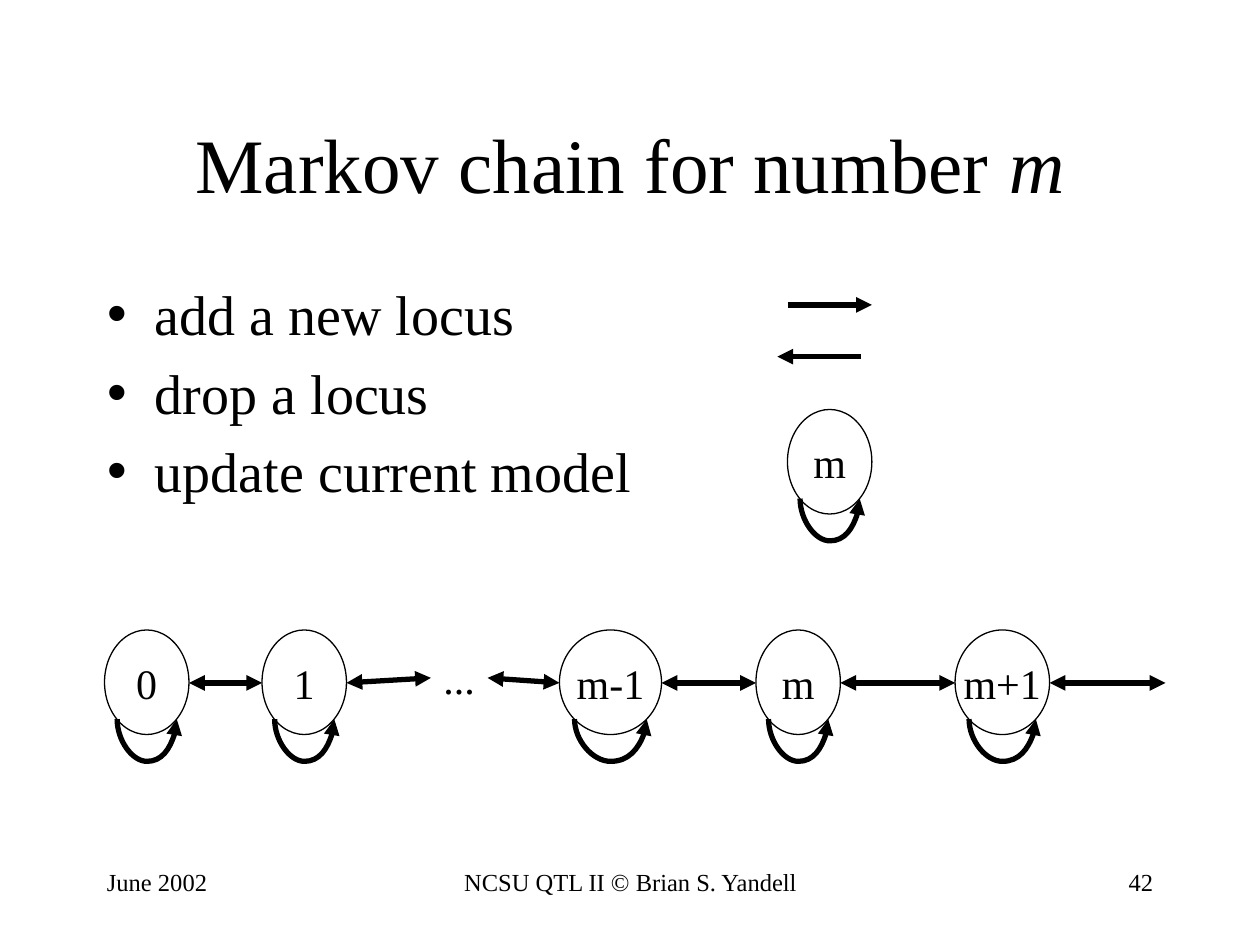
from dataclasses import dataclass
from math import sqrt

from lxml import etree
from pptx import Presentation
from pptx.dml.color import RGBColor
from pptx.enum.shapes import MSO_CONNECTOR, MSO_SHAPE
from pptx.enum.text import MSO_ANCHOR, MSO_AUTO_SIZE, PP_ALIGN
from pptx.oxml.ns import qn
from pptx.util import Emu, Inches, Pt

BLACK = RGBColor(0x00, 0x00, 0x00)
FONT = "Times New Roman"
LEFT, CENTER, RIGHT = PP_ALIGN.LEFT, PP_ALIGN.CENTER, PP_ALIGN.RIGHT
TOP, MIDDLE = MSO_ANCHOR.TOP, MSO_ANCHOR.MIDDLE
STRAIGHT, CURVE = MSO_CONNECTOR.STRAIGHT, MSO_CONNECTOR.CURVE
OVAL = MSO_SHAPE.OVAL
FIT_SHAPE, NO_FIT = MSO_AUTO_SIZE.SHAPE_TO_FIT_TEXT, MSO_AUTO_SIZE.NONE
LEFT_SIDE, RIGHT_SIDE = 1, 3

STATE_HEIGHT = 0.83
CHAIN_TOP = 5.0
CHAIN_MIDDLE = 5.42
LOOP_DEPTH = 0.37
LOOP_THICKNESS = Emu(1588)  # the curve's depth is a multiple of this


@dataclass(frozen=True)
class State:
    label: str
    left: float
    top: float = CHAIN_TOP
    width: float = 0.67

    @property
    def right(self) -> float:
        return self.left + self.width


@dataclass(frozen=True)
class Footer:
    text: str
    left: float
    width: float
    align: PP_ALIGN


ZERO = State("0", 0.83)
ONE = State("1", 2.08)
BEFORE = State("m-1", 4.44, width=0.81)
CURRENT = State("m", 6.0)
AFTER = State("m+1", 7.58, width=0.75)
CHAIN = [ZERO, ONE, BEFORE, CURRENT, AFTER]
LINKS = [(ZERO, ONE), (BEFORE, CURRENT), (CURRENT, AFTER)]
UPDATE = State("m", 6.25, 3.25)

MOVES = ["add a new locus", "drop a locus", "update current model"]
FOOTERS = [
    Footer("June 2002", 0.75, 2.08, LEFT),
    Footer("NCSU QTL II © Brian S. Yandell", 3.42, 3.17, CENTER),
    Footer("42", 7.17, 2.08, RIGHT),
]


def write(para, text: str, *, size: float, italic: bool = False, align=LEFT) -> None:
    para.alignment = align
    span = para.add_run()
    span.text = text
    font = span.font
    font.name, font.size, font.italic = FONT, Pt(size), italic
    font.color.rgb = BLACK


def place(shape, left: float, top: float, width: float, height: float) -> None:
    shape.left, shape.top = Inches(left), Inches(top)
    shape.width, shape.height = Inches(width), Inches(height)


def add_text(page, text: str, left: float, top: float, width: float, *,
             size: float, align=LEFT, wrap: bool = True, fit=NO_FIT):
    box = page.shapes.add_textbox(Inches(left), Inches(top), Inches(width), Inches(0.5))
    frame = box.text_frame
    frame.word_wrap, frame.auto_size = wrap, fit
    write(frame.paragraphs[0], text, size=size, align=align)
    return box


def style_arrow(connector, both: bool = False) -> None:
    connector.line.color.rgb = BLACK
    connector.line.width = Pt(3)
    line = connector.line._get_or_add_ln()
    for end in ("a:headEnd", "a:tailEnd") if both else ("a:tailEnd",):
        etree.SubElement(line, qn(end), type="triangle")
    etree.SubElement(connector.element.spPr, qn("a:effectLst"))


def add_arrow(page, start: float, end: float, y: float, *, both: bool = False):
    arrow = page.shapes.add_connector(
        STRAIGHT, Inches(start), Inches(y), Inches(end), Inches(y))
    style_arrow(arrow, both)
    return arrow


def add_loop(page, state: State) -> None:
    """Arrow from the lower left to the lower right of a state's ellipse."""
    span = state.width / sqrt(2)
    center = state.left + state.width / 2
    y = state.top + STATE_HEIGHT / 2 * (1 + 1 / sqrt(2))
    loop = page.shapes.add_connector(CURVE, 0, 0, 0, 0)
    place(loop, center, y - span / 2, 0, span)
    loop.width = LOOP_THICKNESS
    # A quarter turn and a flip make the curve hang below its ends
    properties = loop.element.spPr
    frame = properties.find(qn("a:xfrm"))
    frame.set("rot", "16200000")
    frame.set("flipH", "1")
    bend = round(Inches(LOOP_DEPTH) / LOOP_THICKNESS * 100000)
    guides = properties.find(qn("a:prstGeom")).find(qn("a:avLst"))
    etree.SubElement(guides, qn("a:gd"), name="adj1", fmla=f"val {bend}")
    style_arrow(loop)


def add_state(page, state: State) -> None:
    oval = page.shapes.add_shape(
        OVAL, Inches(state.left), Inches(state.top), Inches(state.width), Inches(STATE_HEIGHT))
    oval.shadow.inherit = False
    oval.fill.background()
    oval.line.color.rgb = BLACK
    oval.line.width = Pt(0.75)
    frame = oval.text_frame
    frame.word_wrap, frame.vertical_anchor = False, MIDDLE
    write(frame.paragraphs[0], state.label, size=24, align=CENTER)
    add_loop(page, state)


def fill_placeholders(page) -> None:
    title, body = page.placeholders
    place(title, 0.75, 0.67, 8.5, 1.25)
    title.text_frame.vertical_anchor = MIDDLE
    heading = title.text_frame.paragraphs[0]
    write(heading, "Markov chain for number ", size=44, align=CENTER)
    write(heading, "m", size=44, italic=True, align=CENTER)

    place(body, 0.75, 2.17, 8.5, 1.92)
    frame = body.text_frame
    frame.vertical_anchor, frame.auto_size = TOP, NO_FIT
    for index, move in enumerate(MOVES):
        para = frame.add_paragraph() if index else frame.paragraphs[0]
        write(para, move, size=32)
        layout = para._p.get_or_add_pPr()
        layout.set("marL", str(Inches(0.38)))
        layout.set("indent", str(-Inches(0.38)))
        etree.SubElement(layout, qn("a:buChar"), char="•")


def main() -> None:
    deck = Presentation()
    deck.slide_width, deck.slide_height = Inches(10), Inches(7.5)
    page = deck.slides.add_slide(deck.slide_layouts[1])

    # Title, list and footer
    fill_placeholders(page)
    for footer in FOOTERS:
        add_text(page, footer.text, footer.left, 6.83, footer.width,
                 size=14, align=footer.align)

    # Key to the three moves
    add_arrow(page, 6.25, 6.92, 2.42)
    add_arrow(page, 6.83, 6.17, 2.83)
    add_state(page, UPDATE)

    # Chain of states
    for state in CHAIN:
        add_state(page, state)
    for first, second in LINKS:
        add_arrow(page, first.right, second.left, CHAIN_MIDDLE, both=True)
    add_arrow(page, AFTER.right, 9.25, CHAIN_MIDDLE, both=True)

    # Skipped states
    dots = add_text(page, "...", 3.42, 5.13, 0.45, size=24, wrap=False, fit=FIT_SHAPE)
    into_dots = add_arrow(page, ONE.right, 3.42, CHAIN_MIDDLE, both=True)
    into_dots.end_connect(dots, LEFT_SIDE)
    out_of_dots = add_arrow(page, 3.87, BEFORE.left, CHAIN_MIDDLE, both=True)
    out_of_dots.begin_connect(dots, RIGHT_SIDE)

    deck.save("out.pptx")


if __name__ == "__main__":
    main()
